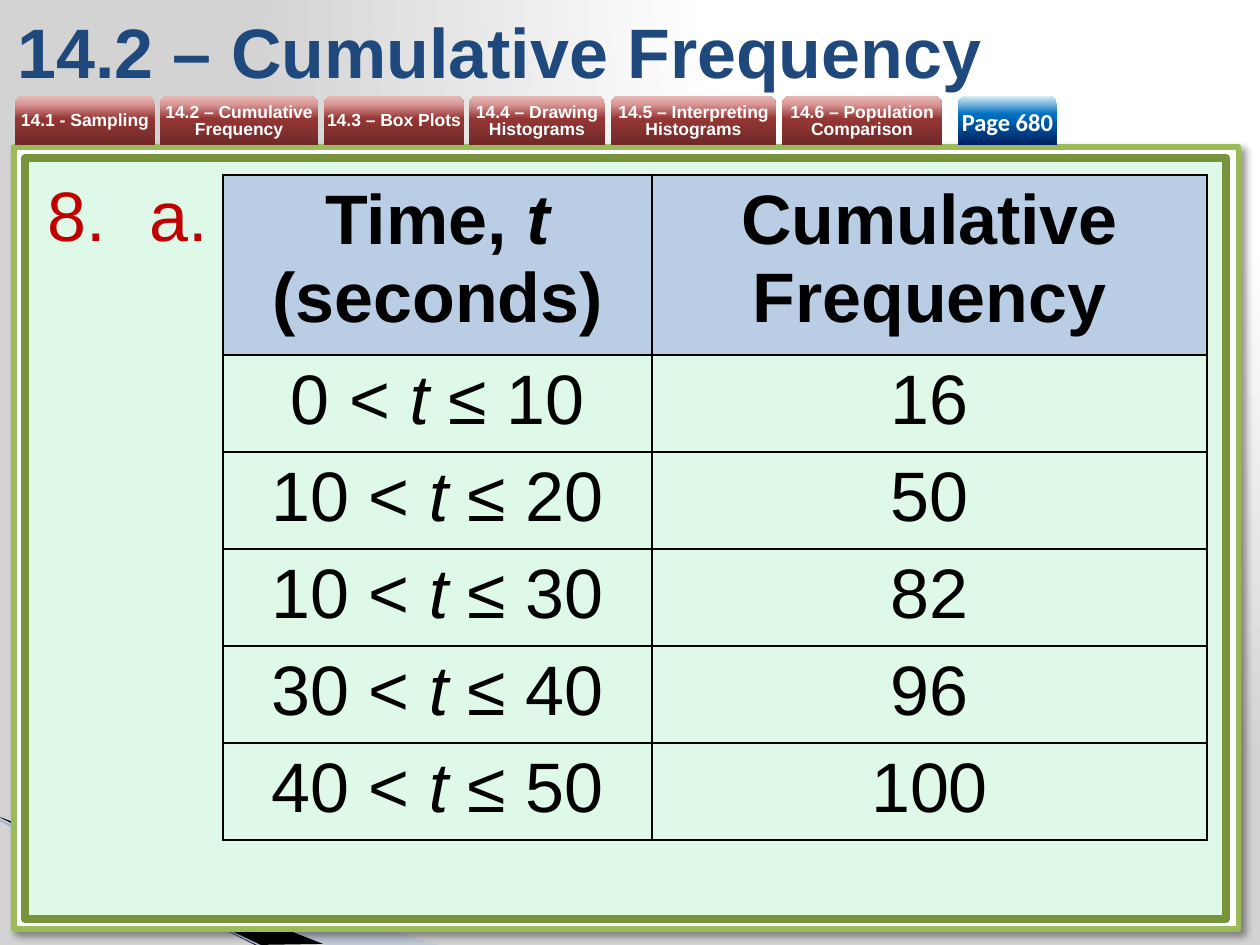
from lxml import etree
from pptx import Presentation
from pptx.dml.color import RGBColor
from pptx.enum.shapes import MSO_CONNECTOR, MSO_SHAPE
from pptx.enum.text import MSO_ANCHOR, PP_ALIGN
from pptx.oxml import parse_xml
from pptx.oxml.ns import nsdecls, qn
from pptx.util import Pt

PX = 914400 / 126
WHITE = RGBColor(0xFF, 0xFF, 0xFF)
BLACK = RGBColor(0x00, 0x00, 0x00)
NAVY = RGBColor(0x1F, 0x49, 0x7D)
RED = RGBColor(0xC0, 0x00, 0x00)
LIME = RGBColor(0x9B, 0xBB, 0x59)
OLIVE = RGBColor(0x77, 0x93, 0x3C)
MINT = RGBColor(0xDF, 0xF9, 0xE8)
HEADER_BLUE = RGBColor(0xB9, 0xCD, 0xE5)
SWOOSH_BLUE = RGBColor(0xA7, 0xB9, 0xDB)
STREAK_BLUE = RGBColor(0x9E, 0xB3, 0xD6)
BACKDROP = [(0, WHITE), (40, WHITE), (100, RGBColor(0xD3, 0xD3, 0xD3))]
TAB_REDS = [(0, RGBColor(0x6F, 0x29, 0x27)), (54, RGBColor(0x95, 0x37, 0x35)),
            (83, RGBColor(0xD9, 0x96, 0x94)), (100, RGBColor(0xE6, 0xB9, 0xB8))]
PAGE_BLUES = [(0, RGBColor(0x00, 0x20, 0x60)), (63, RGBColor(0x00, 0x70, 0xC0)),
              (100, RGBColor(0xDB, 0xEE, 0xF4))]
UPWARD = '<a:lin {} ang="16200000" scaled="0"/>'
RADIAL = '<a:path {} path="circle"><a:fillToRect l="65000" b="98000"/></a:path>'

TITLE = "14.2 – Cumulative Frequency"
TABS = [("14.1 - Sampling", 15, 140), ("14.2 – Cumulative Frequency", 160, 158),
        ("14.3 – Box Plots", 324, 140), ("14.4 – Drawing Histograms", 469, 136),
        ("14.5 – Interpreting Histograms", 611, 165),
        ("14.6 – Population Comparison", 782, 160)]
PAGE = ("Page 680", 958, 99)
QUESTION_NUMBER, QUESTION_PART = 8, "a."
TABLE_ROWS = [("Time, *t* (seconds)", "Cumulative Frequency"),
              ("0 < *t* ≤ 10", "16"), ("10 < *t* ≤ 20", "50"),
              ("10 < *t* ≤ 30", "82"), ("30 < *t* ≤ 40", "96"),
              ("40 < *t* ≤ 50", "100")]
COLUMN_WIDTHS = [429, 555]
HEADER_HEIGHT, ROW_HEIGHT = 180, 97
SWOOSHES = [([(-1, 819), (440, 945), (326, 945), (-1, 818)], SWOOSH_BLUE, 40),
            ([(0, 817), (323, 944), (255, 945), (1, 818)], BLACK, 100)]


def px(*lengths):
    return [round(length * PX) for length in lengths]


def write(frame, text, *, size, color, font="Arial", bold=False,
          align=PP_ALIGN.LEFT, anchor=MSO_ANCHOR.TOP, spacing=None, inset=None):
    """Write text into a frame, with the parts between asterisks in italics."""
    frame.word_wrap = True
    frame.vertical_anchor = anchor
    if inset is not None:
        frame.margin_left = frame.margin_right = inset
        frame.margin_top = frame.margin_bottom = inset
    paragraph = frame.paragraphs[0]
    paragraph.alignment = align
    if spacing:
        paragraph.line_spacing = Pt(spacing)
    for index, part in enumerate(text.split("*")):
        run = paragraph.add_run()
        run.text = part
        run.font.name, run.font.size = font, Pt(size)
        run.font.bold, run.font.italic = bold, index % 2 == 1
        run.font.color.rgb = color


def paint_gradient(fill, owner, stops, direction):
    fill.gradient()
    gradient = owner.find(".//" + qn("a:gradFill"))
    for child in list(gradient):
        gradient.remove(child)
    stop_list = etree.SubElement(gradient, qn("a:gsLst"))
    for position, color in stops:
        stop = etree.SubElement(stop_list, qn("a:gs"), pos=str(position * 1000))
        etree.SubElement(stop, qn("a:srgbClr"), val=str(color))
    gradient.append(parse_xml(direction.format(nsdecls("a"))))


def add_panel(slide, box, color, border, width):
    panel = slide.shapes.add_shape(MSO_SHAPE.RECTANGLE, *px(*box))
    panel.shadow.inherit = False
    panel.fill.solid()
    panel.fill.fore_color.rgb = color
    panel.line.color.rgb, panel.line.width = border, Pt(width)
    return panel


def add_tab(slide, label, left, width, stops, **text_format):
    tab = slide.shapes.add_shape(MSO_SHAPE.ROUND_2_SAME_RECTANGLE,
                                 *px(left, 96, width, 49))
    tab.shadow.inherit = False
    tab.line.fill.background()
    paint_gradient(tab.fill, tab._element.spPr, stops, UPWARD)
    write(tab.text_frame, label, color=WHITE, bold=True, inset=0,
          align=PP_ALIGN.CENTER, anchor=MSO_ANCHOR.MIDDLE, **text_format)


def add_swoosh(slide, points, color, opacity):
    builder = slide.shapes.build_freeform(*points[0], scale=PX)
    builder.add_line_segments(points[1:], close=True)
    swoosh = builder.convert_to_shape()
    swoosh.shadow.inherit = False
    swoosh.line.fill.background()
    swoosh.fill.solid()
    swoosh.fill.fore_color.rgb = color
    if opacity < 100:
        tint = swoosh._element.spPr.find(".//" + qn("a:srgbClr"))
        etree.SubElement(tint, qn("a:alpha"), val=str(opacity * 1000))


def add_question(slide):
    question = slide.shapes.add_textbox(*px(35, 165, 1181, 509))
    properties = question.text_frame.paragraphs[0]._p.get_or_add_pPr()
    indent = px(102)[0]
    properties.set("marL", str(indent))
    properties.set("indent", str(-indent))
    bullet_color = etree.SubElement(properties, qn("a:buClr"))
    etree.SubElement(bullet_color, qn("a:srgbClr"), val=str(RED))
    etree.SubElement(properties, qn("a:buFont"), typeface="+mj-lt")
    etree.SubElement(properties, qn("a:buAutoNum"), type="arabicPeriod",
                     startAt=str(QUESTION_NUMBER))
    write(question.text_frame, QUESTION_PART, size=40, color=RED)


def add_frequency_table(slide):
    heights = [HEADER_HEIGHT] + [ROW_HEIGHT] * (len(TABLE_ROWS) - 1)
    table = slide.shapes.add_table(
        len(heights), len(COLUMN_WIDTHS),
        *px(223, 175, sum(COLUMN_WIDTHS), sum(heights))).table
    table.horz_banding = False
    for column, width in zip(table.columns, px(*COLUMN_WIDTHS)):
        column.width = width
    for index, (row, height) in enumerate(zip(table.rows, px(*heights))):
        row.height = height
        for cell, text in zip(row.cells, TABLE_ROWS[index]):
            write(cell.text_frame, text, size=40, color=BLACK, bold=index == 0,
                  align=PP_ALIGN.CENTER)
            cell.margin_left = cell.margin_right = px(6)[0]
            cell.margin_top = cell.margin_bottom = px(6)[0]
            properties = cell._tc.get_or_add_tcPr()
            for side in ("lnL", "lnR", "lnT", "lnB"):
                border = etree.SubElement(properties, qn(f"a:{side}"), w=str(Pt(1)))
                ink = etree.SubElement(border, qn("a:solidFill"))
                etree.SubElement(ink, qn("a:srgbClr"), val=str(BLACK))
            cell.fill.solid()
            cell.fill.fore_color.rgb = MINT if index else HEADER_BLUE


def main():
    deck = Presentation()
    deck.slide_width, deck.slide_height = px(1260, 945)
    slide = deck.slides.add_slide(deck.slide_layouts[6])
    paint_gradient(slide.background.fill, slide._element, BACKDROP, RADIAL)

    for points, color, opacity in SWOOSHES:
        add_swoosh(slide, points, color, opacity)
    streak = slide.shapes.add_connector(MSO_CONNECTOR.STRAIGHT,
                                        *px(-1, 820, 263, 947))
    streak.line.color.rgb, streak.line.width = STREAK_BLUE, Pt(0.95)
    etree.SubElement(streak._element.spPr, qn("a:effectLst"))

    frame = add_panel(slide, (14, 147, 1225, 782), WHITE, LIME, 3)
    effects = frame._element.spPr.find(qn("a:effectLst"))
    shadow = etree.SubElement(effects, qn("a:outerShdw"), blurRad=str(Pt(4)),
                              dist=str(Pt(3)), dir="2700000", algn="tl")
    shade = etree.SubElement(shadow, qn("a:srgbClr"), val=str(BLACK))
    etree.SubElement(shade, qn("a:alpha"), val="40000")
    add_panel(slide, (25, 158, 1201, 761), MINT, OLIVE, 4.33)

    for label, left, width in TABS:
        add_tab(slide, label, left, width, TAB_REDS, size=10, spacing=10)
    title = slide.shapes.add_textbox(*px(5, 6, 1062, 90))
    write(title.text_frame, TITLE, size=40, color=NAVY, bold=True,
          anchor=MSO_ANCHOR.MIDDLE)
    add_tab(slide, *PAGE, PAGE_BLUES, size=14, font="Calibri")
    add_question(slide)
    add_frequency_table(slide)
    deck.save("out.pptx")


if __name__ == "__main__":
    main()
